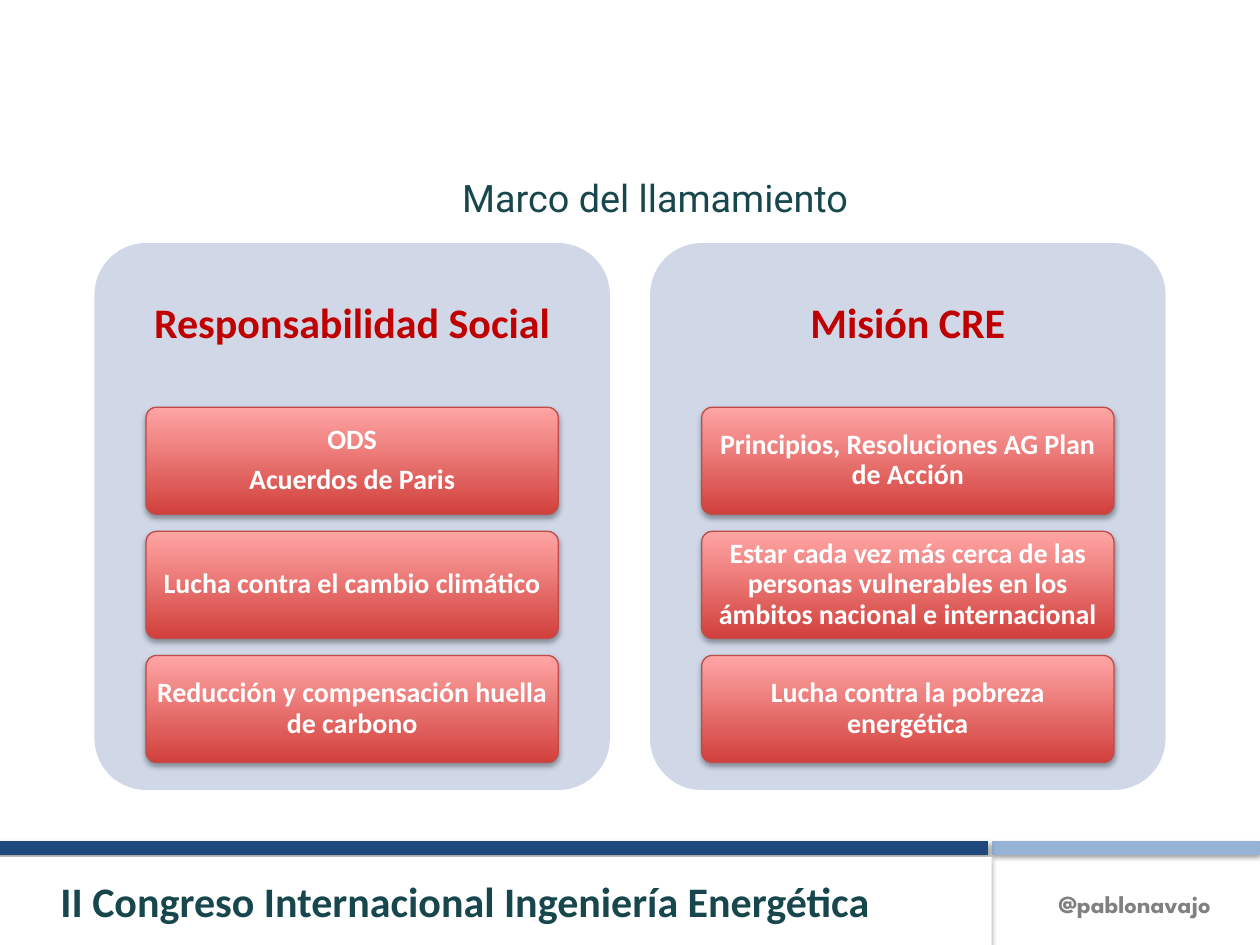
import pptx
import pptx.util
import pptx.dml.color
import pptx.enum.shapes
import pptx.enum.text
import pptx.oxml.ns
from lxml import etree

Inches = pptx.util.Inches
Pt = pptx.util.Pt
SHAPES = pptx.enum.shapes.MSO_SHAPE
ALIGN = pptx.enum.text.PP_ALIGN

COLORS = {
    "white": "FFFFFF",
    "teal": "17474D",
    "navy": "1F497D",
    "sky": "95B3D7",
    "gray": "808080",
    "panel": "D0D8E8",
    "heading": "C00000",
    "card_top": "FFA6A5",
    "card_bottom": "D1403C",
    "card_line": "BF4C48",
    "shadow": "000000",
}

COLUMNS = [
    ("Responsabilidad Social", [
        ["ODS", "Acuerdos de Paris"],
        ["Lucha contra el cambio climático"],
        ["Reducción y compensación huella de carbono"],
    ]),
    ("Misión CRE", [
        ["Principios, Resoluciones AG Plan de Acción"],
        ["Estar cada vez más cerca de las personas vulnerables en los ámbitos nacional e internacional"],
        ["Lucha contra la pobreza energética"],
    ]),
]


def color(name):
    """Return the named colour as an RGBColor."""
    return pptx.dml.color.RGBColor.from_string(COLORS[name])


def add_shadow(properties, distance, opacity):
    """Give shape properties a soft shadow that falls straight down."""
    qn = pptx.oxml.ns.qn
    effects = properties.find(qn("a:effectLst"))
    if effects is None:
        effects = etree.SubElement(properties, qn("a:effectLst"))
    shadow = etree.SubElement(effects, qn("a:outerShdw"), blurRad=str(Pt(3.1)),
                              dist=str(Pt(distance)), dir="5400000", rotWithShape="0")
    tint = etree.SubElement(shadow, qn("a:srgbClr"), val=COLORS["shadow"])
    etree.SubElement(tint, qn("a:alpha"), val=str(opacity * 1000))


def add_shape(slide, kind, left, top, width, height, fill=None):
    """Add a borderless preset shape without shadow."""
    shape = slide.shapes.add_shape(kind, Inches(left), Inches(top), Inches(width), Inches(height))
    shape.shadow.inherit = False
    shape.line.fill.background()
    if fill:
        shape.fill.solid()
        shape.fill.fore_color.rgb = color(fill)
    return shape


def add_text_box(slide, left, top, width, height):
    """Add an empty text box."""
    return slide.shapes.add_textbox(Inches(left), Inches(top), Inches(width), Inches(height))


def write(shape, lines, size, font, tint, bold=True, align=ALIGN.CENTER,
          insets=(0.1, 0.05, 0.1, 0.05), line_spacing=None):
    """Fill a shape with vertically centred paragraphs of one style."""
    frame = shape.text_frame
    frame.word_wrap = True
    frame.vertical_anchor = pptx.enum.text.MSO_ANCHOR.MIDDLE
    frame.margin_left, frame.margin_top, frame.margin_right, frame.margin_bottom = map(Inches, insets)
    frame.text = "\n".join(lines)
    for paragraph in frame.paragraphs:
        paragraph.alignment = align
        paragraph.line_spacing = line_spacing
        paragraph.font.size = Pt(size)
        paragraph.font.name = font
        paragraph.font.bold = bold
        paragraph.font.color.rgb = color(tint)
    for paragraph in frame.paragraphs[:-1]:
        paragraph.space_after = Pt(size * 0.35)


def add_rule(slide, start, end, y, tint):
    """Draw a thick horizontal rule with a shadow."""
    rule = slide.shapes.add_connector(pptx.enum.shapes.MSO_CONNECTOR.STRAIGHT,
                                      Inches(start), Inches(y), Inches(end), Inches(y))
    rule.line.width = Pt(7.75)
    rule.line.color.rgb = color(tint)
    add_shadow(rule._element.spPr, 1.6, 38)


def add_footer(slide, left, top, width, height):
    """Place the rules, the congress name and the author handle."""
    split = left + 7.87
    rule_y = top - 0.07
    add_rule(slide, split, left + width, rule_y, "sky")
    add_rule(slide, left - 0.03, split - 0.03, rule_y, "navy")
    band = add_shape(slide, SHAPES.RECTANGLE, left, top, split - left, height, "white")
    add_shadow(band._element.spPr, 1.8, 35)
    write(band, ["II Congreso Internacional Ingeniería Energética"], 24, "Calibri", "teal",
          align=ALIGN.LEFT, insets=(0.48, 0.05, 0.1, 0.05))
    handle = add_text_box(slide, split + 0.24, top + 0.2, 1.6, 0.34)
    write(handle, ["@pablonavajo"], 14, "League Spartan", "gray", align=ALIGN.RIGHT)


def add_title(slide, left, top, width, height):
    """Place the slide title."""
    title = add_text_box(slide, left, top, width, height)
    write(title, ["Marco del llamamiento"], 21.6, "Roboto", "teal", bold=False)


def add_card(slide, left, top, width, height, lines):
    """Place one red gradient card with its text."""
    card = add_shape(slide, SHAPES.ROUNDED_RECTANGLE, left, top, width, height)
    card.adjustments[0] = 0.1
    card.fill.gradient()
    card.fill.gradient_angle = 90
    for stop, tint in zip(card.fill.gradient_stops, ("card_bottom", "card_top")):
        stop.color.rgb = color(tint)
    card.line.color.rgb = color("card_line")
    card.line.width = Pt(0.75)
    add_shadow(card._element.spPr, 1.8, 35)
    write(card, lines, 16, "Calibri", "white", insets=(0.06, 0.05, 0.06, 0.05), line_spacing=0.9)


def add_column(slide, left, top, width, height, heading, cards):
    """Place a panel with its heading and a stack of cards."""
    panel = add_shape(slide, SHAPES.ROUNDED_RECTANGLE, left, top, width, height, "panel")
    panel.adjustments[0] = 0.1
    heading_height = height * 0.3
    heading_box = add_text_box(slide, left, top, width, heading_height)
    write(heading_box, [heading], 24, "Calibri", "heading", insets=(0.1,) * 4, line_spacing=0.9)
    card_width = width * 0.8
    card_left = left + (width - card_width) / 2
    for index, lines in enumerate(cards):
        card_top = top + heading_height + index * 0.985
        add_card(slide, card_left, card_top, card_width, 0.85, lines)


def main():
    """Build and save the slide."""
    presentation = pptx.Presentation()
    presentation.slide_width = Inches(10)
    presentation.slide_height = Inches(7.5)
    slide = presentation.slides.add_slide(presentation.slide_layouts[6])
    add_footer(slide, 0, 6.8, 10, 0.7)
    add_title(slide, 0.51, 1.34, 9.38, 0.45)
    for index, (heading, cards) in enumerate(COLUMNS):
        add_column(slide, 0.75 + index * 4.41, 1.93, 4.09, 4.34, heading, cards)
    presentation.save("out.pptx")


if __name__ == "__main__":
    main()
